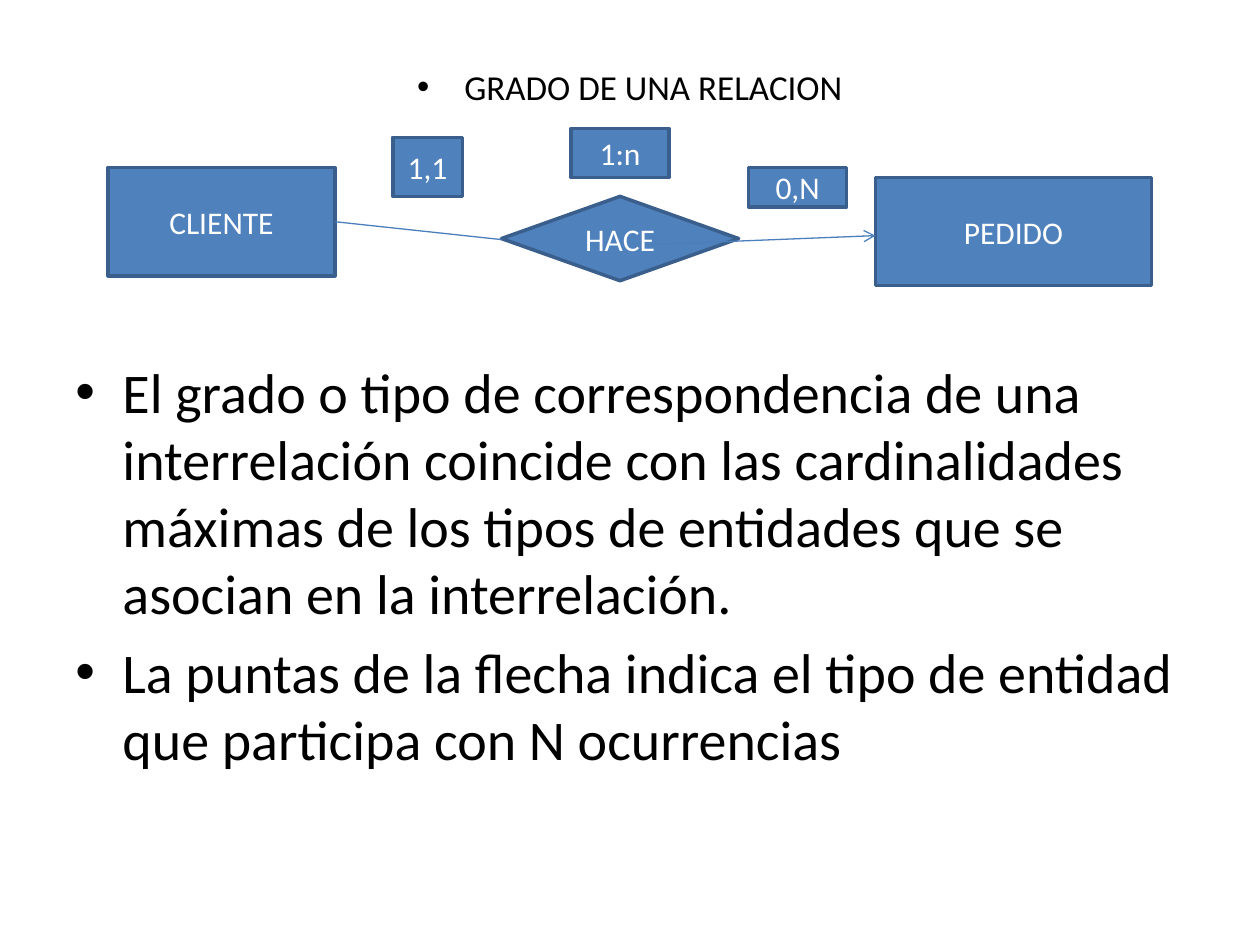
from pptx import Presentation
from pptx.dml.color import RGBColor
from pptx.enum.shapes import MSO_CONNECTOR as Link, MSO_SHAPE as Shape
from pptx.enum.text import MSO_ANCHOR as Anchor, PP_ALIGN as Align
from pptx.oxml.ns import qn
from pptx.util import Cm, Pt
from lxml.etree import SubElement


def color(value):
    return RGBColor.from_string(value)


def apply(target, formats):
    for name, value in formats.items():
        setattr(target, name, value)


class Diagram:
    FONT = "Calibri"
    FILL, BORDER, LINK = "4F81BD", "3A5F8C", "4B7EBC"
    BLACK, WHITE = "000000", "FFFFFF"
    HANGING = Cm(0.95)

    def __init__(self, slide):
        self.slide = slide

    def add_span(self, para, text, size, ink):
        span = para.add_run()
        span.text = text
        apply(span.font, {"name": self.FONT, "size": Pt(size)})
        span.font.color.rgb = color(ink)

    def bullets(self, left, top, width, height, items):
        """Add a bulleted text box; items are (text, size, alignment, space before)."""
        box = self.slide.shapes.add_textbox(Cm(left), Cm(top), Cm(width), Cm(height))
        frame = box.text_frame
        frame.word_wrap = True
        for index, (text, size, align, before) in enumerate(items):
            para = frame.add_paragraph() if index else frame.paragraphs[0]
            apply(para, {"alignment": align, "space_before": Pt(before)})
            self.add_span(para, text, size, self.BLACK)
            layout = para._p.get_or_add_pPr()
            layout.set("marL", str(self.HANGING))
            layout.set("indent", str(-self.HANGING))
            SubElement(layout, qn("a:buFont"), typeface="Arial")
            SubElement(layout, qn("a:buChar"), char="•")

    def node(self, text, left, top, width, height, kind=Shape.FLOWCHART_PROCESS):
        shape = self.slide.shapes.add_shape(kind, Cm(left), Cm(top), Cm(width), Cm(height))
        shape.shadow.inherit = False
        shape.fill.solid()
        shape.fill.fore_color.rgb = color(self.FILL)
        shape.line.color.rgb = color(self.BORDER)
        shape.line.width = Pt(2)
        apply(shape.text_frame, {"word_wrap": True, "vertical_anchor": Anchor.MIDDLE})
        para = shape.text_frame.paragraphs[0]
        para.alignment = Align.CENTER
        self.add_span(para, text, 18, self.WHITE)

    def link(self, start, end, arrow=False):
        line = self.slide.shapes.add_connector(
            Link.STRAIGHT, *(Cm(value) for value in (*start, *end)))
        line.line.color.rgb = color(self.LINK)
        line.line.width = Pt(0.75)
        if arrow:
            SubElement(line.line._get_or_add_ln(), qn("a:tailEnd"), type="arrow")
        SubElement(line._element.spPr, qn("a:effectLst"))


def main():
    deck = Presentation()
    apply(deck, {"slide_width": Cm(25.4), "slide_height": Cm(19.05)})
    diagram = Diagram(deck.slides.add_slide(deck.slide_layouts[6]))

    # The large space before the second item leaves room for the diagram.
    diagram.bullets(1.27, 1.19, 22.86, 15.82, [
        ("GRADO DE UNA RELACION", 20, Align.CENTER, 0),
        ("El grado o tipo de correspondencia de una interrelación coincide con las "
         "cardinalidades máximas de los tipos de entidades que se asocian en la "
         "interrelación.", 32, Align.LEFT, 142.8),
        ("La puntas de la flecha indica el tipo de entidad que participa con N "
         "ocurrencias", 32, Align.LEFT, 6.4),
    ])

    diagram.node("CLIENTE", 2.18, 3.38, 4.57, 2.18)
    diagram.node("PEDIDO", 17.65, 3.58, 5.56, 2.18)
    diagram.node("HACE", 10.11, 3.96, 4.78, 1.7, Shape.FLOWCHART_DECISION)
    diagram.link((6.76, 4.47), (10.11, 4.83))
    diagram.link((13.11, 4.93), (17.65, 4.75), arrow=True)
    diagram.node("1,1", 7.92, 2.77, 1.4, 1.19)
    diagram.node("0,N", 15.09, 3.38, 1.98, 0.79)
    diagram.node("1:n", 11.51, 2.59, 1.98, 0.99)

    deck.save("out.pptx")


if __name__ == "__main__":
    main()
